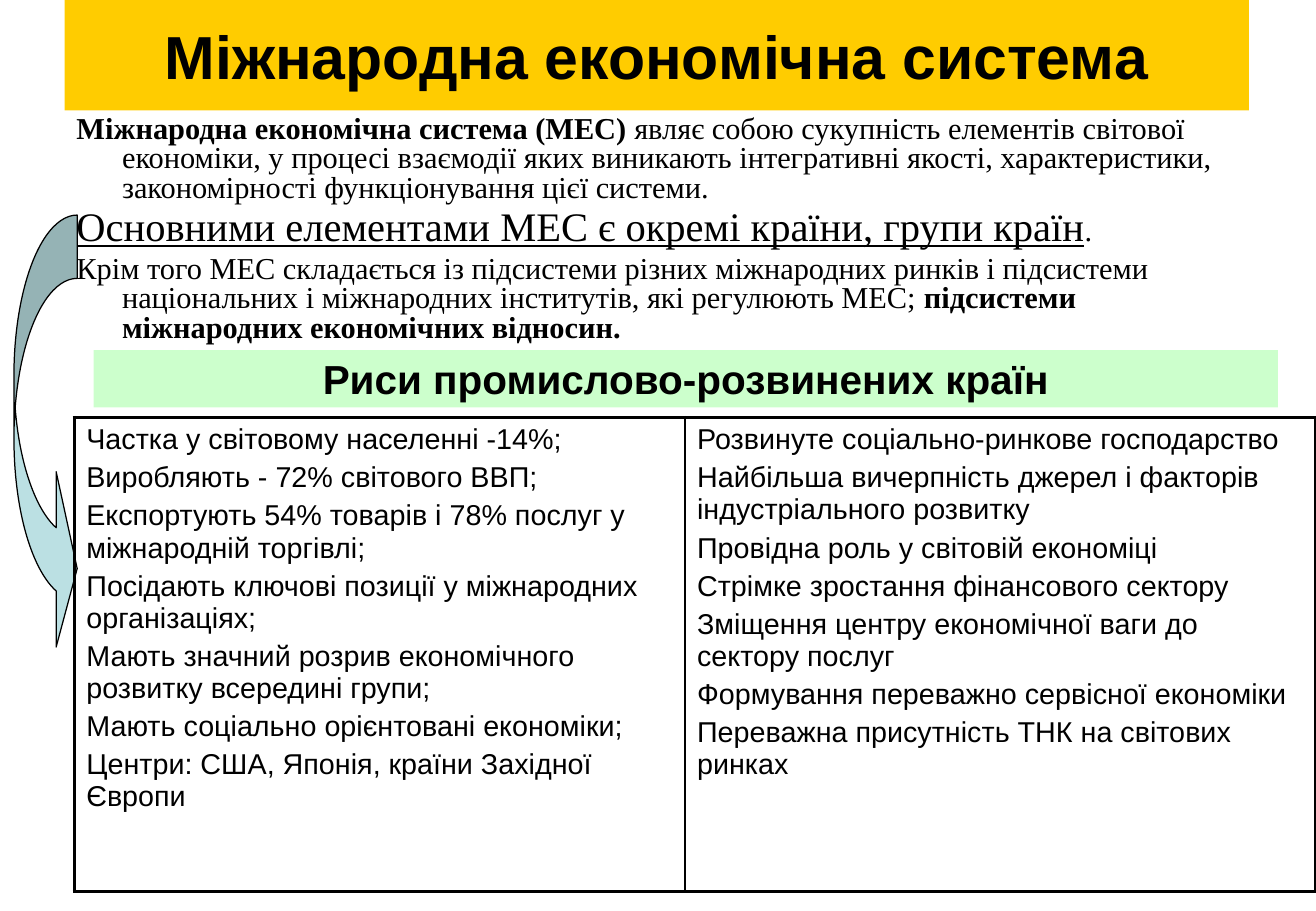
from lxml.etree import SubElement
from pptx import Presentation
from pptx.dml.color import RGBColor
from pptx.enum.shapes import MSO_SHAPE
from pptx.enum.text import MSO_ANCHOR, PP_ALIGN
from pptx.oxml.ns import qn
from pptx.util import Pt

BLACK = "000000"
TITLE = "Міжнародна економічна система"
SUBTITLE = "Риси промислово-розвинених країн"
DEFINITION = [
    [("Міжнародна економічна система (МЕС)", {"bold": True}),
     (" являє собою сукупність елементів світової економіки, у процесі взаємодії яких виникають "
      "інтегративні якості, характеристики, закономірності функціонування цієї системи.", {})],
    [("Основними елементами МЕС є окремі країни, групи країн", {"size": Pt(24), "underline": True}),
     (".", {})],
    [("Крім того МЕС складається із підсистеми різних міжнародних ринків і підсистеми "
      "національних і міжнародних інститутів, які регулюють МЕС; ", {}),
     ("підсистеми міжнародних економічних відносин.", {"bold": True})],
]
FEATURES = [
    ["Частка у світовому населенні -14%;",
     "Виробляють - 72% світового ВВП;",
     "Експортують 54% товарів і 78% послуг у міжнародній торгівлі;",
     "Посідають ключові позиції у міжнародних організаціях;",
     "Мають значний розрив економічного розвитку всередині групи;",
     "Мають соціально орієнтовані економіки;",
     "Центри: США, Японія, країни Західної Європи"],
    ["Розвинуте соціально-ринкове господарство",
     "Найбільша вичерпність джерел і факторів індустріального розвитку",
     "Провідна роль у світовій економіці",
     "Стрімке зростання фінансового сектору",
     "Зміщення центру економічної ваги до сектору послуг",
     "Формування переважно сервісної економіки",
     "Переважна присутність ТНК на світових ринках"],
]


def color(hex_value):
    """Turn a hex string into a colour."""
    return RGBColor.from_string(hex_value)


def points(box):
    """Turn a box of numbers into lengths."""
    return [Pt(value) for value in box]


def add_run(paragraph, text, formats):
    """Add a black run with the given font values."""
    run = paragraph.add_run()
    run.text = text
    run.font.color.rgb = color(BLACK)
    for name, value in formats.items():
        setattr(run.font, name, value)


def write_paragraphs(frame, paragraphs, base, layout):
    """Fill a text frame with paragraphs made of formatted runs."""
    for index, runs in enumerate(paragraphs):
        paragraph = frame.add_paragraph() if index else frame.paragraphs[0]
        for name, value in layout.items():
            setattr(paragraph, name, value)
        for text, formats in runs:
            add_run(paragraph, text, {**base, **formats})


def add_filled_shape(slide, kind, box, fill):
    """Add a filled shape without line or shadow."""
    shape = slide.shapes.add_shape(kind, *points(box))
    shape.shadow.inherit = False
    shape.fill.solid()
    shape.fill.fore_color.rgb = color(fill)
    shape.line.fill.background()
    return shape


def add_banner(slide, box, text, size, fill):
    """Add a coloured band with a centred bold heading."""
    frame = add_filled_shape(slide, MSO_SHAPE.RECTANGLE, box, fill).text_frame
    frame.word_wrap = True
    frame.vertical_anchor = MSO_ANCHOR.MIDDLE
    base = {"name": "Arial", "size": Pt(size), "bold": True}
    write_paragraphs(frame, [[(text, {})]], base, {"alignment": PP_ALIGN.CENTER})


def add_definition(slide, box):
    """Add the definition text with hanging indents."""
    frame = slide.shapes.add_textbox(*points(box)).text_frame
    frame.word_wrap = True
    base = {"name": "Times New Roman", "size": Pt(18)}
    write_paragraphs(frame, DEFINITION, base, {"line_spacing": 0.8, "space_before": Pt(4)})
    for paragraph in frame.paragraphs:
        properties = paragraph._p.get_or_add_pPr()
        properties.set("marL", str(Pt(27)))
        properties.set("indent", str(Pt(-27)))


def add_curved_arrow(slide, box):
    """Add the arrow that leads from the elements to the table, in an upright box."""
    left, top, width, height = box
    flat_box = (left + (width - height) / 2, top + (height - width) / 2, height, width)
    arrow = add_filled_shape(slide, MSO_SHAPE.CURVED_UP_ARROW, flat_box, "BBE0E3")
    arrow.rotation = 90
    arrow.line.color.rgb = color(BLACK)
    arrow.line.width = Pt(0.75)
    for index, value in enumerate((1.386, 2.772, 0.333)):
        arrow.adjustments[index] = value


def set_borders(cell, widths):
    """Draw the black borders of a cell, in the order left, right, top, bottom."""
    properties = cell._tc.get_or_add_tcPr()
    for side, width in zip("LRTB", widths):
        line = SubElement(properties, qn(f"a:ln{side}"), w=str(Pt(width)))
        fill = SubElement(line, qn("a:solidFill"))
        SubElement(fill, qn("a:srgbClr"), val=BLACK)


def add_features(slide, box, first_width):
    """Add the table with the two lists of features."""
    table = slide.shapes.add_table(1, 2, *points(box)).table
    table.first_row = table.horz_banding = False
    widths = (first_width, box[2] - first_width)
    borders = ((2.25, 1, 2.25, 2.25), (1, 2.25, 2.25, 2.25))
    for index, features in enumerate(FEATURES):
        table.columns[index].width = Pt(widths[index])
        cell = table.cell(0, index)
        set_borders(cell, borders[index])
        cell.fill.background()
        write_paragraphs(cell.text_frame, [[(text, {})] for text in features],
                         {"name": "Arial", "size": Pt(17)}, {"space_before": Pt(3.5)})


def build_slide(slide):
    """Place all regions of the slide."""
    add_banner(slide, (38.25, 0, 702, 65.5), TITLE, 36, "FFCC00")
    add_definition(slide, (38.25, 65.5, 713.5, 150))
    add_curved_arrow(slide, (8.25, 127.5, 37.5, 261.5))
    add_banner(slide, (55.5, 207.5, 702, 34), SUBTITLE, 24, "CCFFCC")
    add_features(slide, (44, 247.5, 736, 281), 362)


def main():
    """Create and save the presentation."""
    presentation = Presentation()
    presentation.slide_width, presentation.slide_height = Pt(780), Pt(540)
    build_slide(presentation.slides.add_slide(presentation.slide_layouts[6]))
    presentation.save("out.pptx")


if __name__ == "__main__":
    main()
